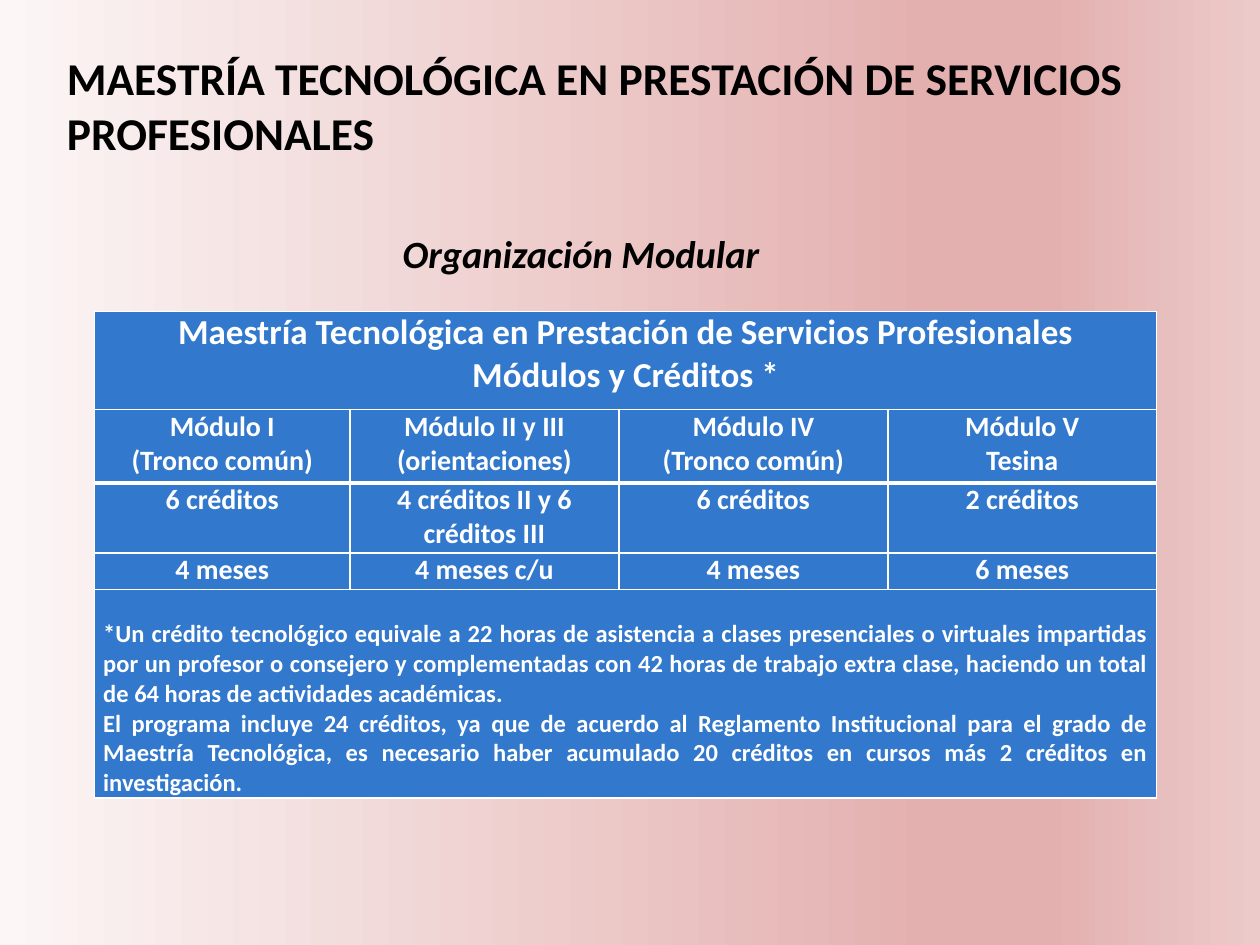
from lxml import etree
from pptx import Presentation
from pptx.dml.color import RGBColor
from pptx.enum.text import MSO_ANCHOR, PP_ALIGN
from pptx.oxml.ns import qn
from pptx.util import Pt

LEFT, MID, JUST = PP_ALIGN.LEFT, PP_ALIGN.CENTER, PP_ALIGN.JUSTIFY
TOP, CENTRE = MSO_ANCHOR.TOP, MSO_ANCHOR.MIDDLE

COLORS = {"ink": "000000", "white": "FFFFFF", "cell": "3278CC"}
FADE = {0: "FCF6F6", 74: "E3B0AF", 83: "E3B0AF", 100: "ECCACA"}

TITLE = "MAESTRÍA TECNOLÓGICA EN PRESTACIÓN DE SERVICIOS PROFESIONALES"
HEAD = ["Maestría Tecnológica en Prestación de Servicios Profesionales",
        "Módulos y Créditos *"]
GRID = [
    [["Módulo I", "(Tronco común)"], ["Módulo II y III", "(orientaciones)"],
     ["Módulo IV", "(Tronco común)"], ["Módulo V", "Tesina"]],
    [["6 créditos"], ["4 créditos II y 6 créditos III"], ["6 créditos"], ["2 créditos"]],
    [["4 meses"], ["4 meses c/u"], ["4 meses"], ["6 meses"]],
]
NOTES = [
    "*Un crédito tecnológico equivale a 22 horas de asistencia a clases presenciales "
    "o virtuales impartidas por un profesor o consejero y complementadas con 42 horas "
    "de trabajo extra clase, haciendo un total de 64 horas de actividades académicas.",
    "El programa incluye 24 créditos, ya que de acuerdo al Reglamento Institucional "
    "para el grado de Maestría Tecnológica, es necesario haber acumulado 20 créditos "
    "en cursos más 2 créditos en investigación.",
]
X, WIDE, FIRST = 54, 607, 146


def set_all(item, values):
    for name, value in values.items():
        setattr(item, name, value)


def write(frame, lines, size, color, align, **extra):
    frame.text = "\n".join(lines)
    style = {"name": "Calibri", "size": Pt(size), "bold": True, **extra}
    for para in frame.paragraphs:
        para.alignment = align
        for run in para.runs:
            set_all(run.font, style)
            run.font.color.rgb = RGBColor.from_string(COLORS[color])


def place(shape, left, top, width, height):
    set_all(shape, {"left": Pt(left), "top": Pt(top),
                    "width": Pt(width), "height": Pt(height)})


def add_stop(parent, tag, color, **attrs):
    node = etree.SubElement(parent, qn(tag), **attrs)
    etree.SubElement(node, qn("a:srgbClr"), val=color)


def paint_back(slide):
    fill = slide.background.fill
    fill.gradient()
    fill.gradient_angle = 0
    stops = slide.element.find(".//" + qn("a:gsLst"))
    for stop in list(stops):
        stops.remove(stop)
    for spot, color in FADE.items():
        add_stop(stops, "a:gs", color, pos=str(spot * 1000))


def add_lines(cell, low):
    props = cell._tc.get_or_add_tcPr()
    for i, side in enumerate("LRTB"):
        width = low if side == "B" else 1
        line = etree.Element(qn("a:ln" + side), w=str(Pt(width)))
        add_stop(line, "a:solidFill", COLORS["white"])
        props.insert(i, line)


def fill_cell(cell, lines, size, align=MID, low=1, gap=0):
    set_all(cell, {"margin_left": Pt(5), "margin_right": Pt(5), "margin_top": Pt(gap),
                   "margin_bottom": Pt(0), "vertical_anchor": TOP})
    cell.fill.solid()
    cell.fill.fore_color.rgb = RGBColor.from_string(COLORS["cell"])
    add_lines(cell, low)
    if lines:
        write(cell.text_frame, lines, size, "white", align)


def add_table(slide, top, cols, rows):
    table = slide.shapes.add_table(len(rows), len(cols), Pt(X), Pt(top),
                                   Pt(sum(cols)), Pt(sum(rows))).table
    set_all(table, {"first_row": False, "horz_banding": False})
    for col, width in zip(table.columns, cols):
        col.width = Pt(width)
    for row, height in zip(table.rows, rows):
        row.height = Pt(height)
    return table


def main():
    deck = Presentation()
    set_all(deck, {"slide_width": Pt(720), "slide_height": Pt(540)})
    slide = deck.slides.add_slide(deck.slide_layouts[5])
    paint_back(slide)

    # Title and subtitle
    title = slide.shapes.title
    place(title, 31, 15, 648, 90)
    title.text_frame.vertical_anchor = CENTRE
    write(title.text_frame, [TITLE], 26, "ink", LEFT)
    sub = slide.shapes.add_textbox(Pt(223), Pt(128), Pt(228), Pt(34)).text_frame
    sub.word_wrap = True
    write(sub, ["Organización Modular"], 22, "ink", LEFT, italic=True)

    # Heading table
    head = add_table(slide, 178, [WIDE], [57])
    fill_cell(head.cell(0, 0), HEAD, 20, low=3)

    # Modules table
    cols = [FIRST] + [(WIDE - FIRST) / 3] * 3
    table = add_table(slide, 234, cols, [42, 40, 21, 119])
    for r, row in enumerate(GRID):
        for c, lines in enumerate(row):
            fill_cell(table.cell(r, c), lines, 16, low=1 if r else 3)

    # Notes across the last row
    last = len(GRID)
    table.cell(last, 0).merge(table.cell(last, 3))
    for c in range(4):
        fill_cell(table.cell(last, c), [] if c else NOTES, 14, JUST, gap=17)

    deck.save("out.pptx")


if __name__ == "__main__":
    main()
